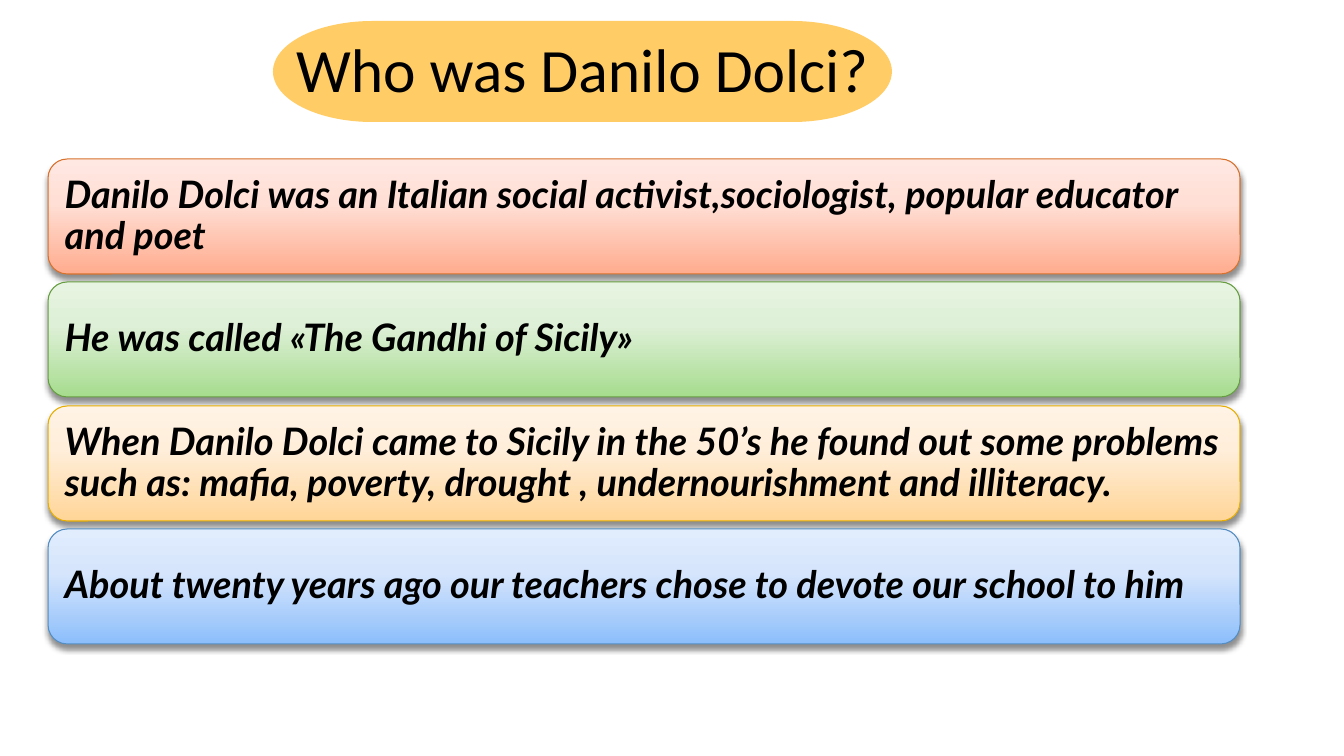
from copy import deepcopy

from lxml.etree import SubElement
from pptx import Presentation
from pptx.dml.color import RGBColor
from pptx.enum.shapes import MSO_SHAPE as Shape
from pptx.enum.text import MSO_ANCHOR as Anchor, MSO_AUTO_SIZE as AutoSize, PP_ALIGN as Align
from pptx.oxml.ns import qn
from pptx.util import Pt

EMU_PER_PX = 914400 / 100.8
TITLE_ONLY = 5


def px(length):
    return round(length * EMU_PER_PX)


def color(hex_string):
    return RGBColor.from_string(hex_string)


class SlideBuilder:
    text_color = "000000"
    title_font, title_size = "Calibri", 44
    fact_font, fact_size = "Lato", 27
    stop_positions = (0, 0.62, 1)

    def __init__(self, presentation):
        self.slide = presentation.slides.add_slide(presentation.slide_layouts[TITLE_ONLY])

    def add_shape(self, kind, left, top, width, height):
        shape = self.slide.shapes.add_shape(kind, *map(px, (left, top, width, height)))
        shape.shadow.inherit = False
        return shape

    def add_title_plate(self, left, top, width, height, fill):
        plate = self.add_shape(Shape.FLOWCHART_TERMINATOR, left, top, width, height)
        plate.fill.solid()
        plate.fill.fore_color.rgb = color(fill)
        plate.line.fill.background()

    def add_title(self, text, left, top, width, height):
        title = self.slide.shapes.title
        title.left, title.top, title.width, title.height = map(px, (left, top, width, height))
        self.slide.shapes._spTree.append(title._element)  # bring to front
        self.set_text(title, text, self.title_font, self.title_size)

    def add_fact(self, text, left, top, width, height, stops, line):
        box = self.add_shape(Shape.ROUNDED_RECTANGLE, left, top, width, height)
        self.fill_gradient(box, stops)
        box.line.color.rgb = color(line)
        box.line.width = Pt(0.75)
        self.drop_shadow(box)
        frame = box.text_frame
        frame.margin_left = frame.margin_right = px(11)
        frame.margin_top = frame.margin_bottom = px(11)
        self.set_text(box, text, self.fact_font, self.fact_size, emphasis=True)

    def set_text(self, shape, text, font_name, size, emphasis=False):
        frame = shape.text_frame
        frame.text = text
        frame.word_wrap = True
        frame.auto_size = AutoSize.NONE
        frame.vertical_anchor = Anchor.MIDDLE
        paragraph = frame.paragraphs[0]
        paragraph.alignment = Align.LEFT
        paragraph.line_spacing = 0.9
        font = paragraph.font
        font.name, font.size = font_name, Pt(size)
        font.bold = font.italic = emphasis
        font.color.rgb = color(self.text_color)

    def fill_gradient(self, shape, stops):
        """Fill from bottom to top with three colour stops."""
        shape.fill.gradient()
        shape.fill.gradient_angle = 90
        stop_list = shape._element.spPr.find(".//" + qn("a:gsLst"))
        stop_list.append(deepcopy(stop_list[0]))
        for stop, position, rgb in zip(shape.fill.gradient_stops, self.stop_positions, stops):
            stop.position = position
            stop.color.rgb = color(rgb)

    def drop_shadow(self, shape):
        effects = shape._element.spPr.find(qn("a:effectLst"))
        shadow = SubElement(effects, qn("a:outerShdw"), blurRad=str(Pt(4)), dist=str(Pt(3)),
                            dir="5400000", rotWithShape="0")
        tone = SubElement(shadow, qn("a:srgbClr"), val="000000")
        SubElement(tone, qn("a:alpha"), val="43000")


FACTS = [
    ("Danilo Dolci was an Italian social activist,sociologist, popular educator and poet",
     ("FFAC8E", "FFDFD6", "FFE8E2"), "D7712C"),
    ("He was called «The Gandhi of Sicily»",
     ("A6DC8E", "DEF0D7", "E7F4E2"), "669D40"),
    ("When Danilo Dolci came to Sicily in the 50’s he found out some problems such as: "
     "mafia, poverty, drought , undernourishment and illiteracy.",
     ("FFD597", "FFEEDA", "FFF3E5"), "E7AE00"),
    ("About twenty years ago our teachers chose to devote our school to him",
     ("8CBEFB", "D6E5FC", "E1ECFD"), "538DC1"),
]
FACTS_TOP, FACTS_BOTTOM, FACT_HEIGHT = 159, 644, 115


def main():
    presentation = Presentation()
    presentation.slide_width, presentation.slide_height = px(1344), px(756)
    builder = SlideBuilder(presentation)
    builder.add_title_plate(273, 21, 619, 101, "FFCC66")
    builder.add_title("Who was Danilo Dolci?", 286, 0, 1159, 146)
    pitch = (FACTS_BOTTOM - FACT_HEIGHT - FACTS_TOP) / (len(FACTS) - 1)
    for index, (text, stops, line) in enumerate(FACTS):
        top = round(FACTS_TOP + index * pitch)
        builder.add_fact(text, 48, top, 1192, FACT_HEIGHT, stops, line)
    presentation.save("out.pptx")


if __name__ == "__main__":
    main()
